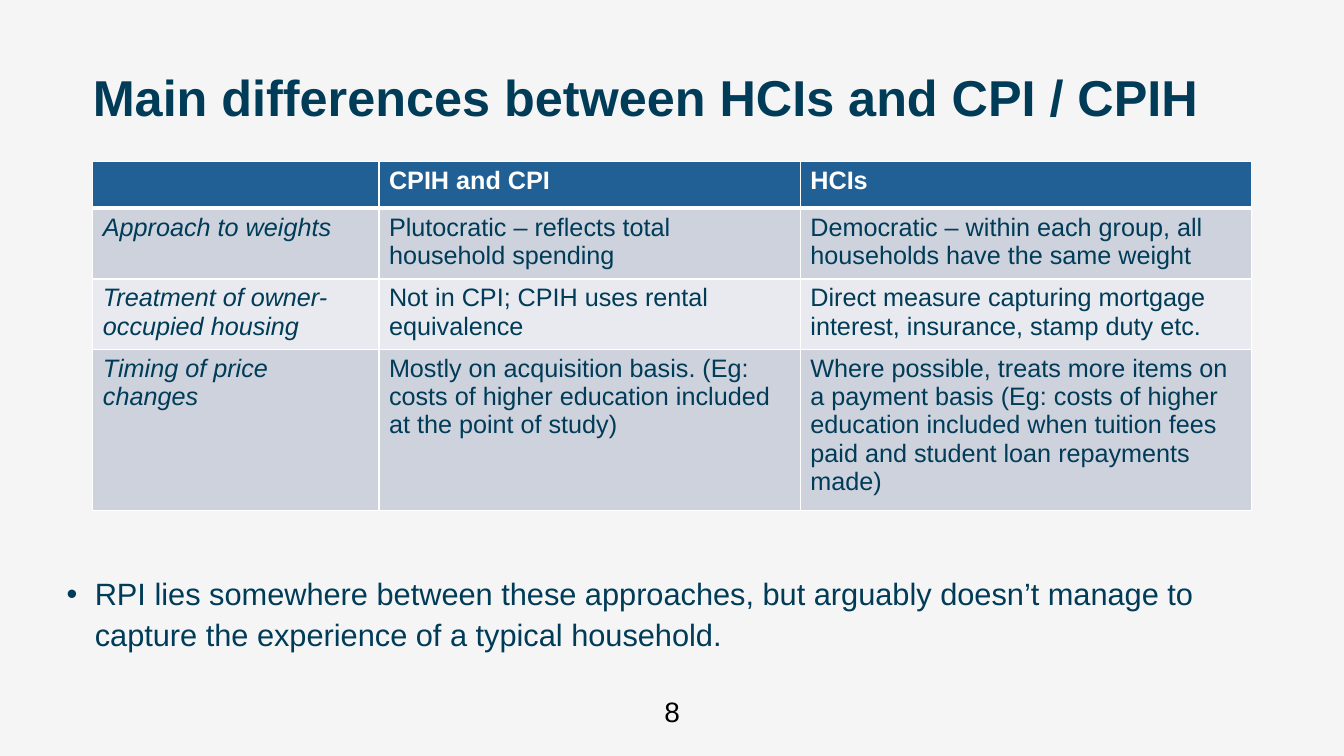
"""Builds a slide comparing HCIs with CPI and CPIH."""
from dataclasses import dataclass

from lxml.etree import SubElement
from pptx import Presentation
from pptx.dml.color import RGBColor as RGB
from pptx.enum.text import PP_ALIGN as Align
from pptx.oxml.ns import qn
from pptx.util import Cm, Pt


@dataclass(frozen=True)
class Theme:
    font: str = "Arial"
    background: str = "F5F5F6"
    title: str = "003C57"
    text: str = "003B57"
    number: str = "000000"
    white: str = "FFFFFF"
    header: str = "206095"
    bands: tuple = ("CDD2DD", "E8EAEF")
    title_size: int = 36
    bullet_size: int = 22
    number_size: int = 20
    table_size: int = 18


THEME = Theme()
COLUMN_WIDTHS = (7.21, 10.62, 11.38)
ROW_HEIGHTS = (1.19, 1.68, 1.68, 3.8)
ROWS = (
    ("", "CPIH and CPI", "HCIs"),
    ("Approach to weights",
     "Plutocratic – reflects total household spending",
     "Democratic – within each group, all households have the same weight"),
    ("Treatment of owner-occupied housing",
     "Not in CPI; CPIH uses rental equivalence",
     "Direct measure capturing mortgage interest, insurance, stamp duty etc."),
    ("Timing of price changes",
     "Mostly on acquisition basis. (Eg: costs of higher education included "
     "at the point of study)",
     "Where possible, treats more items on a payment basis (Eg: costs of higher "
     "education included when tuition fees paid and student loan repayments made)"),
)


def write(tf, text, size, color, bold=False, italic=False, align=Align.LEFT,
          spacing=1.0, after=0, bullet_indent=None):
    p = tf.paragraphs[0]
    p.alignment, p.line_spacing, p.space_after = align, spacing, Pt(after)
    if bullet_indent:
        pPr = p._p.get_or_add_pPr()
        pPr.set("marL", str(bullet_indent))
        pPr.set("indent", str(-bullet_indent))
        SubElement(pPr, qn("a:buFont"), typeface=THEME.font)
        SubElement(pPr, qn("a:buChar"), char="•")
    r = p.add_run()
    r.text = text
    font = r.font
    font.name, font.size, font.bold, font.italic = THEME.font, Pt(size), bold, italic
    font.color.rgb = RGB.from_string(color)


def add_text(s, left, top, width, height, text, inset=True, **style):
    tf = s.shapes.add_textbox(Cm(left), Cm(top), Cm(width), Cm(height)).text_frame
    tf.word_wrap = True
    if not inset:
        tf.margin_left = tf.margin_right = tf.margin_top = tf.margin_bottom = 0
    write(tf, text, **style)


def set_borders(cell, top, bottom):
    tcPr = cell._tc.get_or_add_tcPr()
    for side, width in (("L", 1), ("R", 1), ("T", top), ("B", bottom)):
        ln = SubElement(tcPr, qn(f"a:ln{side}"), w=str(Pt(width)))
        fill = SubElement(ln, qn("a:solidFill"))
        SubElement(fill, qn("a:srgbClr"), val=THEME.white)


def add_comparison(s, left, top):
    frame = s.shapes.add_table(len(ROWS), len(COLUMN_WIDTHS), Cm(left), Cm(top),
                               Cm(sum(COLUMN_WIDTHS)), Cm(sum(ROW_HEIGHTS)))
    table = frame.table
    for column, width in zip(table.columns, COLUMN_WIDTHS):
        column.width = Cm(width)
    for i, (texts, height) in enumerate(zip(ROWS, ROW_HEIGHTS)):
        table.rows[i].height = Cm(height)
        header = i == 0
        for j, text in enumerate(texts):
            cell = table.cell(i, j)
            set_borders(cell, top=3 if i == 1 else 1, bottom=3 if header else 1)
            cell.fill.solid()
            fill = THEME.header if header else THEME.bands[(i - 1) % 2]
            cell.fill.fore_color.rgb = RGB.from_string(fill)
            if text:
                write(cell.text_frame, text, size=THEME.table_size, bold=header,
                      color=THEME.white if header else THEME.text,
                      italic=j == 0)


def main():
    prs = Presentation()
    prs.slide_width, prs.slide_height = Cm(33.87), Cm(19.05)
    s = prs.slides.add_slide(prs.slide_layouts[6])
    s.background.fill.solid()
    s.background.fill.fore_color.rgb = RGB.from_string(THEME.background)
    add_text(s, 12.95, 17.37, 7.98, 1.02, "8", size=THEME.number_size,
             color=THEME.number, align=Align.CENTER)
    add_text(s, 2.34, 1.78, 29.21, 1.47, "Main differences between HCIs and CPI / CPIH",
             inset=False, size=THEME.title_size, color=THEME.title, bold=True,
             spacing=0.95, after=10)
    add_comparison(s, 2.34, 4.06)
    add_text(s, 1.68, 14.4, 31.19, 1.98,
             "RPI lies somewhere between these approaches, but arguably doesn’t manage "
             "to capture the experience of a typical household.",
             inset=False, size=THEME.bullet_size, color=THEME.text, spacing=1.1,
             after=5, bullet_indent=Cm(0.71))
    prs.save("out.pptx")


if __name__ == "__main__":
    main()
